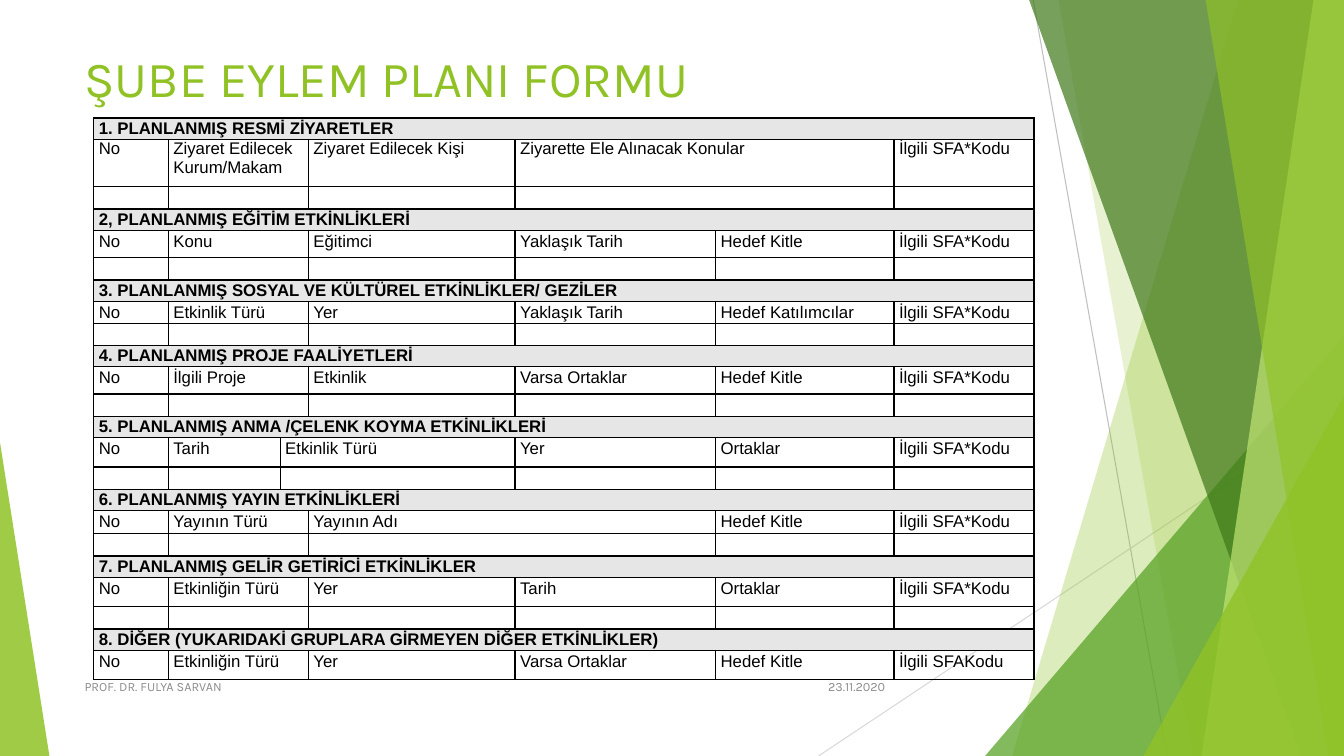
from lxml import etree
from pptx import Presentation
from pptx.dml.color import RGBColor
from pptx.enum.shapes import MSO_CONNECTOR, MSO_SHAPE
from pptx.enum.text import MSO_ANCHOR, PP_ALIGN
from pptx.oxml.ns import qn
from pptx.util import Inches, Pt

LINE = MSO_CONNECTOR.STRAIGHT
TRIANGLE = MSO_SHAPE.ISOSCELES_TRIANGLE
MIDDLE = MSO_ANCHOR.MIDDLE
LEFT, RIGHT = PP_ALIGN.LEFT, PP_ALIGN.RIGHT

UNIT = Inches(0.1)
SLIDE_COLS, SLIDE_ROWS = 133.33, 75
GREEN, BLACK, BAND, GREY = "90C226", "000000", "E7E6E6", "8C8C8C"

COLUMN_WIDTHS = [7.4, 11.1, 2.8, 20.5, 19.9, 17.7, 13.9]
BAND_HEIGHT, ENTRY_HEIGHT = 2.1, 2.2
USUAL = (0, 1, 3, 4, 5, 6)
CODE = "İlgili SFA*Kodu"
SECTIONS = [
    ("1. PLANLANMIŞ RESMİ ZİYARETLER", 4.7, (0, 1, 3, 4, 6),
     ["No", "Ziyaret Edilecek Kurum/Makam", "Ziyaret Edilecek Kişi",
      "Ziyarette Ele Alınacak Konular", CODE]),
    ("2, PLANLANMIŞ EĞİTİM ETKİNLİKLERİ", 2.7, USUAL,
     ["No", "Konu", "Eğitimci", "Yaklaşık Tarih", "Hedef Kitle", CODE]),
    ("3. PLANLANMIŞ SOSYAL VE KÜLTÜREL ETKİNLİKLER/ GEZİLER", 2, USUAL,
     ["No", "Etkinlik Türü", "Yer", "Yaklaşık Tarih", "Hedef Katılımcılar", CODE]),
    ("4. PLANLANMIŞ PROJE FAALİYETLERİ", 2.7, USUAL,
     ["No", "İlgili Proje", "Etkinlik", "Varsa Ortaklar", "Hedef Kitle", CODE]),
    ("5. PLANLANMIŞ ANMA /ÇELENK KOYMA ETKİNLİKLERİ", 2.9, (0, 1, 2, 4, 5, 6),
     ["No", "Tarih", "Etkinlik Türü", "Yer", "Ortaklar", CODE]),
    ("6. PLANLANMIŞ YAYIN ETKİNLİKLERİ", 2.3, (0, 1, 3, 5, 6),
     ["No", "Yayının Türü", "Yayının Adı", "Hedef Kitle", CODE]),
    ("7. PLANLANMIŞ GELİR GETİRİCİ ETKİNLİKLER", 2.9, USUAL,
     ["No", "Etkinliğin Türü", "Yer", "Tarih", "Ortaklar", CODE]),
    ("8. DİĞER (YUKARIDAKİ GRUPLARA GİRMEYEN DİĞER ETKİNLİKLER)", 2.9, USUAL,
     ["No", "Etkinliğin Türü", "Yer", "Varsa Ortaklar", "Hedef Kitle", "İlgili SFAKodu"]),
]


def units(*values):
    return [round(value * UNIT) for value in values]


def color(hex_text):
    return RGBColor.from_string(hex_text)


def style_font(font, name, size, hex_text, bold=False):
    font.name, font.size, font.bold = name, Pt(size), bold
    font.color.rgb = color(hex_text)


def tint(facet, hex_text, opacity):
    facet.shadow.inherit = False
    facet.line.fill.background()
    facet.fill.solid()
    facet.fill.fore_color.rgb = color(hex_text)
    tone = facet.fill._xPr.find(qn("a:solidFill"))[0]
    etree.SubElement(tone, qn("a:alpha")).set("val", str(opacity * 1000))


def add_thin_line(slide, start, end, hex_text):
    thin_line = slide.shapes.add_connector(LINE, *units(*start, *end))
    thin_line.line.color.rgb = color(hex_text)
    thin_line.line.width = Pt(0.75)
    etree.SubElement(thin_line._element.spPr, qn("a:effectLst"))


def add_band(slide, box, top_x, bottom_x, slants_left, hex_text, opacity):
    left, top, width, height = box
    right, bottom = left + width, top + height
    corners = [(left + top_x, top), (right, top), (right, bottom), (left + bottom_x, bottom)]
    start, *others = [units(*corner) for corner in corners]
    builder = slide.shapes.build_freeform(*start, scale=1.0)
    builder.add_line_segments(others, close=True)
    tint(builder.convert_to_shape(), hex_text, opacity)


def add_corner(slide, box, width, height, apex, hex_text, opacity):
    left, top, box_width, box_height = box
    x = left + (box_width - width) * apex
    corner = slide.shapes.add_shape(
        TRIANGLE, *units(x, top + box_height - height, width, height))
    corner.adjustments[0] = apex
    tint(corner, hex_text, opacity)


def add_facets(slide, box):
    left, top, width, height = box
    right, bottom = left + width, top + height
    add_thin_line(slide, (left + 4.8, top), (left + 18.1, bottom), "BFBFBF")
    add_thin_line(slide, (right, top + 40.3), (left - 16.5, bottom), "D9D9D9")
    add_band(slide, box, 25.1, 2.7, True, GREEN, 30)
    add_band(slide, box, 7.3, 20.6, False, GREEN, 20)
    add_corner(slide, box, 35.6, 41.7, 1, "54A021", 72)
    add_band(slide, box, 4.4, 31.4, False, "3F7819", 70)
    add_band(slide, box, 32.6, 21.5, True, "C0E474", 70)
    add_band(slide, box, 21.9, 34.1, False, GREEN, 65)
    add_corner(slide, box, 19.9, 35.7, 1, GREEN, 80)


def add_label(slide, box, text, size, hex_text, align=LEFT):
    frame = slide.shapes.add_textbox(*units(*box)).text_frame
    frame.word_wrap = True
    frame.vertical_anchor = MIDDLE
    label = frame.paragraphs[0]
    label.text, label.alignment = text, align
    style_font(label.font, "Karla", size, hex_text)


def style_cell(cell, text, bold, spacing):
    cell.margin_left = cell.margin_right = Inches(0.05)
    cell.margin_top = cell.margin_bottom = 0
    content = cell.text_frame.paragraphs[0]
    content.text, content.line_spacing = text, spacing
    style_font(content.font, "Arial", 12, BLACK, bold)


def frame_cell(cell):
    properties = cell._tc.get_or_add_tcPr()
    for side in ("lnL", "lnR", "lnT", "lnB"):
        border = etree.SubElement(properties, qn("a:" + side), w=str(Pt(1)))
        fill = etree.SubElement(border, qn("a:solidFill"))
        etree.SubElement(fill, qn("a:srgbClr"), val=BLACK)
    cell.fill.background()


def fill_row(table, row, starts, texts, bold=False, spacing=1.07):
    ends = [*starts[1:], len(COLUMN_WIDTHS)]
    for start, end, text in zip(starts, ends, texts):
        cell = table.cell(row, start)
        if end - start > 1:
            cell.merge(table.cell(row, end - 1))
        style_cell(cell, text, bold, spacing)
        if bold:
            cell.fill.solid()
            cell.fill.fore_color.rgb = color(BAND)


def add_plan_form(slide, box):
    heights = []
    for _, head_height, _, _ in SECTIONS:
        heights += [BAND_HEIGHT, head_height, ENTRY_HEIGHT]
    heights.pop()
    table = slide.shapes.add_table(len(heights), len(COLUMN_WIDTHS), *units(*box)).table
    table.first_row = table.horz_banding = False
    for column, width in zip(table.columns, units(*COLUMN_WIDTHS)):
        column.width = width
    for row, height in zip(table.rows, units(*heights)):
        row.height = height
    for cell in table.iter_cells():
        frame_cell(cell)
        style_cell(cell, "", False, 1)
    for index, (heading, _, starts, labels) in enumerate(SECTIONS):
        row = index * 3
        fill_row(table, row, (0,), [heading], bold=True)
        fill_row(table, row + 1, starts, labels, spacing=1.07 if index else 1)
        if row + 2 < len(heights):
            fill_row(table, row + 2, starts, [""] * len(starts), spacing=1)


def add_footer(slide, box):
    left, top, width, height = box
    add_label(slide, (left + width - 10, top, 10, height), "23.11.2020", 9, GREY, RIGHT)
    add_label(slide, (left, top, 68.9, height), "PROF. DR. FULYA SARVAN", 9, GREY)


def main():
    deck = Presentation()
    deck.slide_width, deck.slide_height = units(SLIDE_COLS, SLIDE_ROWS)
    slide = deck.slides.add_slide(deck.slide_layouts[6])
    add_facets(slide, (97.7, 0, SLIDE_COLS - 97.7, SLIDE_ROWS))
    add_corner(slide, (0, 0, SLIDE_COLS, SLIDE_ROWS), 4.9, 31.1, 0, GREEN, 85)
    add_label(slide, (7.4, 3.7, 94, 8), "ŞUBE EYLEM PLANI FORMU", 36, GREEN)
    add_plan_form(slide, (9.3, 11.7, sum(COLUMN_WIDTHS), 55.3))
    add_footer(slide, (7.4, 66.1, 81.4, 4))
    deck.save("out.pptx")


if __name__ == "__main__":
    main()
